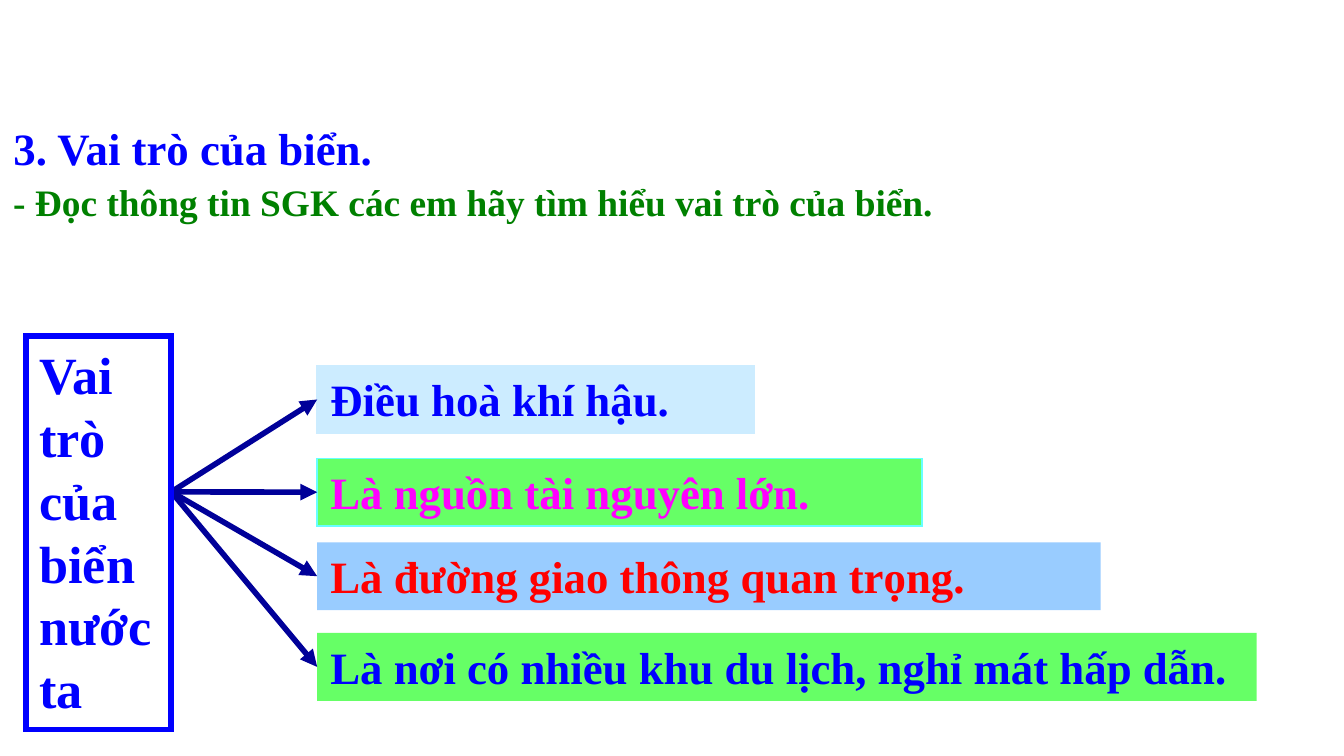
from lxml import etree
from pptx import Presentation
from pptx.dml.color import RGBColor
from pptx.enum.shapes import MSO_CONNECTOR, MSO_SHAPE
from pptx.enum.text import MSO_ANCHOR, MSO_AUTO_SIZE, PP_ALIGN
from pptx.oxml.ns import qn
from pptx.util import Emu, Pt

PX = 4572  # 200 px to the inch
FONT = "Times New Roman"
COLORS = {
    "blue": "0000FF", "green": "008000", "red": "FF0000", "magenta": "FF00FF",
    "navy": "000099", "ice": "CCECFF", "sky": "99CCFF", "lime": "66FF66",
    "cyan": "66FFFF",
}
# text, top, width, fill, outline, text colour
ROLES = [
    ("Điều hoà khí hậu.", 44, 650, "ice", "ice", "blue"),
    ("Là nguồn tài nguyên lớn.", 182, 900, "lime", "cyan", "magenta"),
    ("Là đường giao thông quan trọng.", 307, 1166, "sky", None, "red"),
    ("Là nơi có nhiều khu du lịch, nghỉ mát hấp dẫn.", 442, 1398, "lime", None, "blue"),
]


def px(*values):
    return [Emu(value * PX) for value in values]


def color(name):
    return RGBColor.from_string(COLORS[name])


def write(shape, text, size, color_name, align=PP_ALIGN.LEFT):
    frame = shape.text_frame
    frame.word_wrap = True
    frame.auto_size = MSO_AUTO_SIZE.NONE
    frame.vertical_anchor = MSO_ANCHOR.TOP
    frame.margin_left, frame.margin_right = px(20, 20)
    frame.margin_top, frame.margin_bottom = px(10, 10)
    paragraph = frame.paragraphs[0]
    paragraph.alignment = align
    paragraph.space_before = Pt(0)
    run = paragraph.add_run()
    run.text = text
    run.font.name = FONT
    run.font.size = Pt(size)
    run.font.bold = True
    run.font.color.rgb = color(color_name)


def add_box(slide, box, fill=None, outline=None, line_width=0.75):
    shape = slide.shapes.add_shape(MSO_SHAPE.RECTANGLE, *px(*box))
    shape.shadow.inherit = False
    if fill:
        shape.fill.solid()
        shape.fill.fore_color.rgb = color(fill)
    else:
        shape.fill.background()
    if outline:
        shape.line.color.rgb = color(outline)
        shape.line.width = Pt(line_width)
        etree.SubElement(shape.line._get_or_add_ln(), qn("a:miter"), lim="800000")
    else:
        shape.line.fill.background()
    return shape


def add_arrow(slide, start, target):
    """Draw an arrow from a point to the middle of the target's left side."""
    connector = slide.shapes.add_connector(
        MSO_CONNECTOR.STRAIGHT, *px(*start),
        target.left, target.top + target.height // 2)
    connector.end_connect(target, 1)
    connector.line.color.rgb = color("navy")
    connector.line.width = Pt(3)
    line = connector.line._get_or_add_ln()
    etree.SubElement(line, qn("a:tailEnd"), type="triangle")
    etree.SubElement(connector._element.spPr, qn("a:effectLst"))


def add_heading(slide, left, top, width):
    title = slide.shapes.title
    title.left, title.top, title.width, title.height = px(left, top, width, 100)
    write(title, "3. Vai trò của biển.", 24, "blue")
    task = slide.shapes.add_textbox(*px(left, top + 87, width, 88))
    write(task, "- Đọc thông tin SGK các em hãy tìm hiểu vai trò của biển.",
          20, "green", PP_ALIGN.JUSTIFY)


def add_role_diagram(slide, left, top, height):
    topic_width = 216
    start = (left + topic_width, top + 232)
    roles = []
    for text, offset, width, fill, outline, text_color in ROLES:
        role = add_box(slide, (left + 433, top + offset, width, 101), fill, outline)
        write(role, text, 24, text_color)
        roles.append(role)
    for role in roles:
        add_arrow(slide, start, role)
    topic = add_box(slide, (left, top, topic_width, height),
                    outline="blue", line_width=3)
    write(topic, "Vai trò của biển nước ta", 28, "blue")


def main():
    presentation = Presentation()
    presentation.slide_width, presentation.slide_height = px(2000, 1125)
    slide = presentation.slides.add_slide(presentation.slide_layouts[5])
    add_heading(slide, 0, 170, 2000)
    add_role_diagram(slide, 39, 500, 586)
    presentation.save("out.pptx")


if __name__ == "__main__":
    main()
